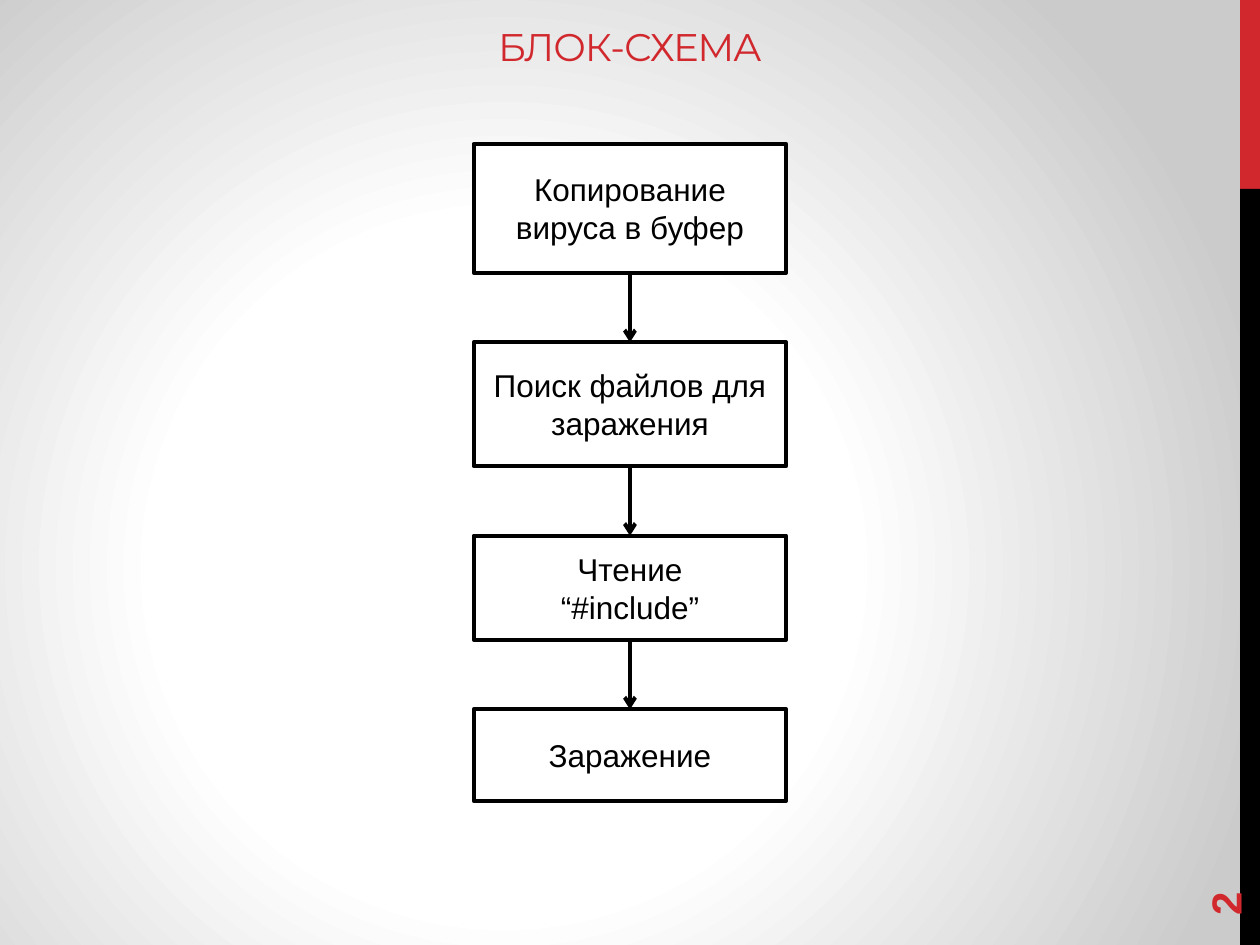
from lxml.etree import SubElement
from pptx import Presentation
from pptx.dml.color import RGBColor
from pptx.enum.shapes import MSO_CONNECTOR, MSO_SHAPE
from pptx.enum.text import MSO_ANCHOR, PP_ALIGN
from pptx.oxml import parse_xml
from pptx.oxml.ns import nsdecls, qn
from pptx.util import Cm, Pt

RED, BLACK, WHITE, GREY = "D1282E", "000000", "FFFFFF", "CBCBCB"
SLIDE_W, SLIDE_H = 25.4, 19.05
STRIPE_W, STRIPE_SPLIT = 0.4, 3.81
BOX_W, FIRST_TOP, GAP = 6.3, 2.9, 1.4
STEPS = [
    (["Копирование вируса в буфер"], 2.6),
    (["Поиск файлов для заражения"], 2.5),
    (["Чтение", "“#include”"], 2.1),
    (["Заражение"], 1.85),
]


def rgb(color):
    return RGBColor.from_string(color)


def set_font(p, name, size, color, bold=False):
    p.font.name = name
    p.font.size = Pt(size)
    p.font.color.rgb = rgb(color)
    p.font.bold = bold


def set_background(slide):
    """Fill the slide with a circular gradient, white inside and grey outside."""
    slide.background.fill.gradient()
    grad = slide.element.find(".//" + qn("a:gradFill"))
    stops = "".join(
        f'<a:gs pos="{pos * 1000}"><a:srgbClr val="{color}"/></a:gs>'
        for pos, color in [(0, WHITE), (44, WHITE), (100, GREY)]
    )
    radial = parse_xml(
        f'<a:gradFill {nsdecls("a")} rotWithShape="1"><a:gsLst>{stops}</a:gsLst>'
        '<a:path path="circle">'
        '<a:fillToRect l="40000" t="60000" r="60000" b="40000"/>'
        "</a:path></a:gradFill>"
    )
    grad.getparent().replace(grad, radial)


def add_rect(slide, left, top, width, height, fill):
    sp = slide.shapes.add_shape(
        MSO_SHAPE.RECTANGLE, Cm(left), Cm(top), Cm(width), Cm(height))
    sp.shadow.inherit = False
    sp.fill.solid()
    sp.fill.fore_color.rgb = rgb(fill)
    sp.line.fill.background()
    return sp


def set_title(slide, text):
    title = slide.shapes.title
    title.left, title.top = Cm(0), Cm(0)
    title.width, title.height = Cm(SLIDE_W), Cm(1.52)
    tf = title.text_frame
    tf.text = text
    tf.vertical_anchor = MSO_ANCHOR.BOTTOM
    p = tf.paragraphs[0]
    p.alignment = PP_ALIGN.CENTER
    set_font(p, "Montserrat", 22, RED)
    p.runs[0].font.element.set("spc", "-60") if hasattr(
        p.runs[0].font, "element") else p.font._rPr.set("spc", "-60")


def add_page_number(slide, text):
    box = slide.shapes.add_textbox(Cm(22.86), Cm(16.36), Cm(3.66), Cm(1.02))
    box.rotation = 270
    tf = box.text_frame
    tf.word_wrap = True
    tf.vertical_anchor = MSO_ANCHOR.MIDDLE
    tf.text = text
    set_font(tf.paragraphs[0], "Arial", 24, RED, bold=True)


def add_step(slide, lines, top, height):
    sp = add_rect(slide, (SLIDE_W - BOX_W) / 2, top, BOX_W, height, WHITE)
    sp.line.color.rgb = rgb(BLACK)
    sp.line.width = Pt(2.25)
    tf = sp.text_frame
    tf.word_wrap = True
    tf.vertical_anchor = MSO_ANCHOR.MIDDLE
    tf.text = "\n".join(lines)
    for p in tf.paragraphs:
        p.alignment = PP_ALIGN.CENTER
        set_font(p, "Arial", 18, BLACK)
    return sp


def add_arrow(slide, upper, lower):
    cxn = slide.shapes.add_connector(MSO_CONNECTOR.STRAIGHT, 0, 0, 0, 0)
    cxn.begin_connect(upper, 2)
    cxn.end_connect(lower, 0)
    cxn.line.color.rgb = rgb(BLACK)
    cxn.line.width = Pt(2.25)
    sp_pr = cxn.element.spPr
    SubElement(sp_pr.find(qn("a:ln")), qn("a:tailEnd"), type="arrow")
    SubElement(sp_pr, qn("a:effectLst"))


def main():
    prs = Presentation()
    prs.slide_width, prs.slide_height = Cm(SLIDE_W), Cm(SLIDE_H)
    slide = prs.slides.add_slide(prs.slide_layouts[5])
    set_background(slide)

    stripe_left = SLIDE_W - STRIPE_W
    add_rect(slide, stripe_left, 0, STRIPE_W, STRIPE_SPLIT, RED)
    add_rect(slide, stripe_left, STRIPE_SPLIT, STRIPE_W, SLIDE_H - STRIPE_SPLIT, BLACK)
    set_title(slide, "БЛОК-СХЕМА")
    add_page_number(slide, "2")

    top, previous = FIRST_TOP, None
    for lines, height in STEPS:
        step = add_step(slide, lines, top, height)
        if previous is not None:
            add_arrow(slide, previous, step)
        previous = step
        top += height + GAP

    prs.save("out.pptx")


if __name__ == "__main__":
    main()
